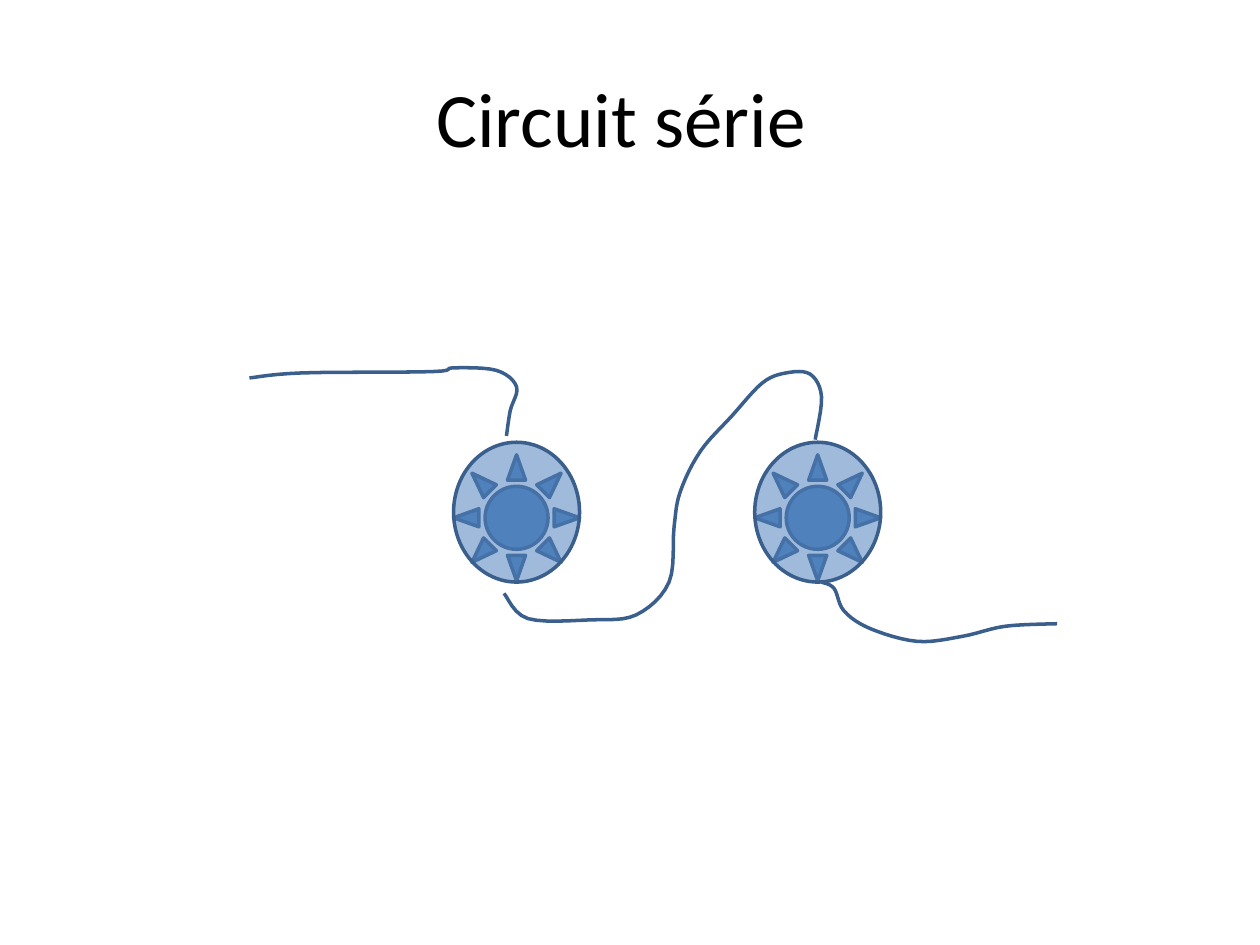
from pptx import Presentation
from pptx.dml.color import RGBColor
from pptx.enum.shapes import MSO_SHAPE
from pptx.enum.text import MSO_ANCHOR, PP_ALIGN
from pptx.oxml.ns import qn
from pptx.util import Inches, Pt
from lxml import etree

SUN, OVAL = MSO_SHAPE.SUN, MSO_SHAPE.OVAL
CENTER, MIDDLE = PP_ALIGN.CENTER, MSO_ANCHOR.MIDDLE
COLORS = {"text": "000000", "fill": "4F81BD", "line": "3A5F8C"}

# Lamps stand in a row: left edge of the first, then a fixed step
LAMP_X, LAMP_STEP, LAMP_COUNT = 3.6, 2.39, 2
SUN_Y, SUN_SIZE = 3.61, 1
BULB_Y, BULB_H = 3.51, 1.11

# Each wire is a smooth curve through its bends
STEPS = 6  # straight pieces from one bend to the next
WIRES = {
    "into first lamp": [
        (1.98, 3), (2.4, 2.96), (3.43, 2.95), (3.6, 2.92), (3.94, 2.94),
        (4.1, 3.07), (4.05, 3.26), (4.02, 3.46)],
    "first to second lamp": [
        (4, 4.71), (4.19, 4.91), (4.69, 4.92), (5.05, 4.88), (5.31, 4.62),
        (5.35, 4.18), (5.4, 3.9), (5.56, 3.58), (5.81, 3.3), (6.05, 3.04),
        (6.24, 2.96), (6.43, 2.97), (6.52, 3.15), (6.47, 3.49)],
    "out of second lamp": [
        (6.52, 4.62), (6.62, 4.67), (6.7, 4.85), (6.91, 4.99), (7.28, 5.09),
        (7.64, 5.05), (7.98, 4.97), (8.39, 4.95)],
}


def rgb(name):
    return RGBColor.from_string(COLORS[name])


def add_text(slide, text, *, box, size, color="text", font="Calibri"):
    frame = slide.shapes.add_textbox(*map(Inches, box)).text_frame
    frame.word_wrap = True
    frame.vertical_anchor = MIDDLE
    para = frame.paragraphs[0]
    para.alignment = CENTER
    run = para.add_run()
    run.text = text
    run.font.name, run.font.size = font, Pt(size)
    run.font.color.rgb = rgb(color)


def outline(shape):
    shape.shadow.inherit = False
    shape.line.color.rgb = rgb("line")
    shape.line.width = Pt(2)


def blend(a, b, c, d, t):
    """Catmull-Rom rule: value at t between b and c, led by a and d."""
    return (2 * b + (c - a) * t + (2 * a - 5 * b + 4 * c - d) * t ** 2
            + (3 * b - a - 3 * c + d) * t ** 3) / 2


def smooth(bends):
    """Points of the curve that runs through all bends."""
    ends = [bends[0], *bends, bends[-1]]
    points = [bends[0]]
    for four in zip(ends, ends[1:], ends[2:], ends[3:]):
        xs, ys = zip(*four)
        for step in range(1, STEPS + 1):
            t = step / STEPS
            points.append((blend(*xs, t), blend(*ys, t)))
    return points


def add_wire(slide, bends):
    start, *rest = [(Inches(x), Inches(y)) for x, y in smooth(bends)]
    pen = slide.shapes.build_freeform(*start)
    pen.add_line_segments(rest, close=False)
    wire = pen.convert_to_shape()
    wire.fill.background()
    outline(wire)


def add_shape(slide, kind, box, alpha=100):
    shape = slide.shapes.add_shape(kind, *map(Inches, box))
    shape.fill.solid()
    shape.fill.fore_color.rgb = rgb("fill")
    outline(shape)
    if alpha < 100:
        color = shape.fill._xPr.find(".//" + qn("a:srgbClr"))
        etree.SubElement(color, qn("a:alpha"), val=str(alpha * 1000))


def add_lamp(slide, x):
    """A sun under a translucent bulb."""
    add_shape(slide, SUN, (x, SUN_Y, SUN_SIZE, SUN_SIZE))
    add_shape(slide, OVAL, (x, BULB_Y, SUN_SIZE, BULB_H), alpha=54)


def main():
    deck = Presentation()
    deck.slide_width, deck.slide_height = Inches(10), Inches(7.5)
    slide = deck.slides.add_slide(deck.slide_layouts[6])

    # Title: the trailing space shifts it slightly left
    add_text(slide, "Circuit série ", box=(0.5, 0.3, 9, 1.25), size=44)

    # Circuit: wires first, lamps over them
    for bends in WIRES.values():
        add_wire(slide, bends)
    for place in range(LAMP_COUNT):
        add_lamp(slide, LAMP_X + place * LAMP_STEP)

    deck.save("out.pptx")


if __name__ == "__main__":
    main()
